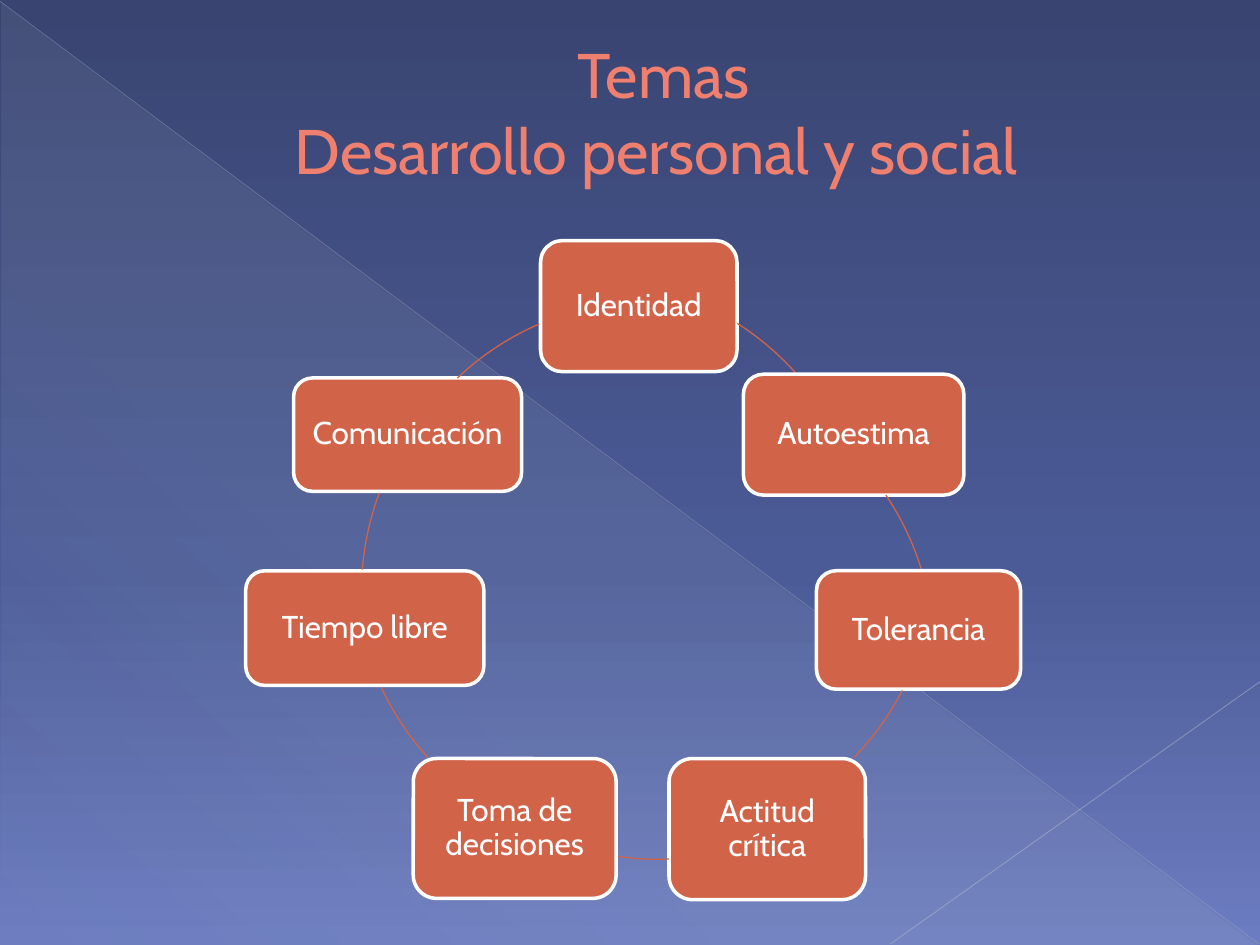
"""Build a slide showing seven personal and social development themes in a ring."""
from dataclasses import dataclass
from math import atan2, degrees

from lxml.etree import SubElement
from pptx import Presentation
from pptx.dml.color import RGBColor
from pptx.enum.shapes import MSO_CONNECTOR as Connector, MSO_SHAPE as Preset
from pptx.enum.text import MSO_ANCHOR as Anchor, PP_ALIGN as Align
from pptx.oxml.ns import qn
from pptx.slide import Slide
from pptx.util import Inches, Pt

FONT = "Cabin"
NIGHT = RGBColor(0x39, 0x44, 0x71)
DUSK = RGBColor(0x4B, 0x5B, 0x97)
LAVENDER = RGBColor(0x6C, 0x7C, 0xC0)
MIST = RGBColor(0xC5, 0xD1, 0xD7)
SILVER = RGBColor(0xBA, 0xBE, 0xCD)
PALE = RGBColor(0xC2, 0xC5, 0xD2)
CORAL = RGBColor(0xEF, 0x7F, 0x6E)
BRICK = RGBColor(0xD1, 0x63, 0x49)
WHITE = RGBColor(0xFF, 0xFF, 0xFF)

RING_DIAMETER = 4.44
TITLE_LINES = ("Temas", "Desarrollo personal y social ")


@dataclass
class Stop:
    position: int
    color: RGBColor
    opacity: int = 100


@dataclass
class Ray:
    start: tuple[float, float]
    end: tuple[float, float]
    color: RGBColor
    width: float
    opacity: int


@dataclass
class Theme:
    label: str
    left: float
    top: float
    width: float
    height: float


@dataclass
class Link:
    left: float
    top: float
    start: tuple[float, float]
    end: tuple[float, float]


SKY = (Stop(0, NIGHT), Stop(60, DUSK), Stop(100, LAVENDER))
SHEEN = (Stop(0, MIST, 10), Stop(70, MIST, 8), Stop(100, MIST, 1))
RAYS = (
    Ray((0, 0.01), (9.99, 7.49), SILVER, 0.39, 35),
    Ray((10, 5.41), (7.07, 7.49), PALE, 0.47, 45),
)
THEMES = (
    Theme("Identidad", 4.29, 1.91, 1.56, 1.04),
    Theme("Autoestima", 5.9, 2.97, 1.75, 0.96),
    Theme("Tolerancia", 6.48, 4.53, 1.62, 0.94),
    Theme("Actitud crítica", 5.31, 6.02, 1.56, 1.12),
    Theme("Toma de decisiones", 3.28, 6.02, 1.61, 1.11),
    Theme("Tiempo libre", 1.95, 4.53, 1.89, 0.91),
    Theme("Comunicación", 2.33, 3, 1.81, 0.9),
)
LINKS = (
    Link(2.44, 2.22, (5.85, 2.57), (6.31, 2.96)),
    Link(2.97, 2.95, (7.03, 3.93), (7.32, 4.52)),
    Link(2.97, 2.24, (7.16, 5.48), (6.78, 6.01)),
    Link(3, 2.38, (5.31, 6.82), (4.9, 6.8)),
    Link(2.82, 2.3, (3.4, 6.01), (3.02, 5.45)),
    Link(2.87, 2.47, (2.87, 4.52), (3.01, 3.91)),
    Link(2.94, 2.39, (3.63, 3), (4.28, 2.57)),
)


def add_color(parent, color: RGBColor, opacity: int) -> None:
    tint = SubElement(parent, qn("a:srgbClr"), val=str(color))
    if opacity < 100:
        SubElement(tint, qn("a:alpha"), val=str(opacity * 1000))


def set_gradient(owner, fill, stops: tuple[Stop, ...], angle: int) -> None:
    fill.gradient()
    gradient = next(owner.iter(qn("a:gradFill")))
    for child in list(gradient):
        gradient.remove(child)
    stop_list = SubElement(gradient, qn("a:gsLst"))
    for stop in stops:
        entry = SubElement(stop_list, qn("a:gs"), pos=str(stop.position * 1000))
        add_color(entry, stop.color, stop.opacity)
    SubElement(gradient, qn("a:lin"), ang=str(angle * 60000), scaled="0")


def draw_ray(page: Slide, ray: Ray) -> None:
    points = [Inches(value) for value in (*ray.start, *ray.end)]
    line = page.shapes.add_connector(Connector.STRAIGHT, *points)
    line.line.width = Pt(ray.width)
    line.line.fill.solid()
    properties = line._element.spPr
    solid = next(properties.iter(qn("a:solidFill")))
    add_color(solid, ray.color, ray.opacity)
    SubElement(properties, qn("a:effectLst"))


def draw_backdrop(page: Slide) -> None:
    set_gradient(page._element, page.background.fill, SKY, 90)
    triangle = page.shapes.add_shape(
        Preset.RIGHT_TRIANGLE, Inches(0.01), Inches(0.02), Inches(9.98), Inches(7.48))
    triangle.shadow.inherit = False
    triangle.line.fill.background()
    set_gradient(triangle._element, triangle.fill, SHEEN, 133)
    for ray in RAYS:
        draw_ray(page, ray)


def add_span(para, text: str, size: int, color: RGBColor) -> None:
    span = para.add_run()
    span.text = text
    span.font.name = FONT
    span.font.size = Pt(size)
    span.font.color.rgb = color


def write_title(page: Slide) -> None:
    title = page.shapes.title
    title.left, title.top = Inches(0.5), Inches(0.29)
    title.width, title.height = Inches(9), Inches(1.19)
    title.text_frame.vertical_anchor = Anchor.MIDDLE
    para = title.text_frame.paragraphs[0]
    para.alignment = Align.CENTER
    properties = para._p.get_or_add_pPr()
    properties.set("marL", str(Inches(0.53)))
    properties.set("indent", "0")
    for index, text in enumerate(TITLE_LINES):
        if index:
            para.add_line_break()
        add_span(para, text, 36, CORAL)
    page.shapes._spTree.append(title._element)


def draw_theme(page: Slide, theme: Theme) -> None:
    box = page.shapes.add_shape(
        Preset.ROUNDED_RECTANGLE, Inches(theme.left), Inches(theme.top),
        Inches(theme.width), Inches(theme.height))
    box.shadow.inherit = False
    box.fill.solid()
    box.fill.fore_color.rgb = BRICK
    box.line.color.rgb = WHITE
    box.line.width = Pt(2)
    frame = box.text_frame
    frame.word_wrap = True
    frame.vertical_anchor = Anchor.MIDDLE
    frame.margin_left = frame.margin_right = Inches(0.07)
    frame.margin_top = frame.margin_bottom = Inches(0.07)
    para = frame.paragraphs[0]
    para.alignment = Align.CENTER
    para.line_spacing = 0.9
    add_span(para, theme.label, 18, WHITE)


def draw_link(page: Slide, link: Link) -> None:
    size = Inches(RING_DIAMETER)
    arc = page.shapes.add_shape(
        Preset.ARC, Inches(link.left), Inches(link.top), size, size)
    arc.shadow.inherit = False
    arc.fill.background()
    arc.line.color.rgb = BRICK
    arc.line.width = Pt(0.75)
    center_x = link.left + RING_DIAMETER / 2
    center_y = link.top + RING_DIAMETER / 2
    for index, (x, y) in enumerate((link.start, link.end)):
        angle = degrees(atan2(y - center_y, x - center_x)) % 360
        arc.adjustments[index] = angle * 0.6


def main() -> None:
    deck = Presentation()
    deck.slide_width, deck.slide_height = Inches(10), Inches(7.5)
    page = deck.slides.add_slide(deck.slide_layouts.get_by_name("Title Only"))
    draw_backdrop(page)
    write_title(page)
    for theme, link in zip(THEMES, LINKS):
        draw_theme(page, theme)
        draw_link(page, link)
    deck.save("out.pptx")


if __name__ == "__main__":
    main()
